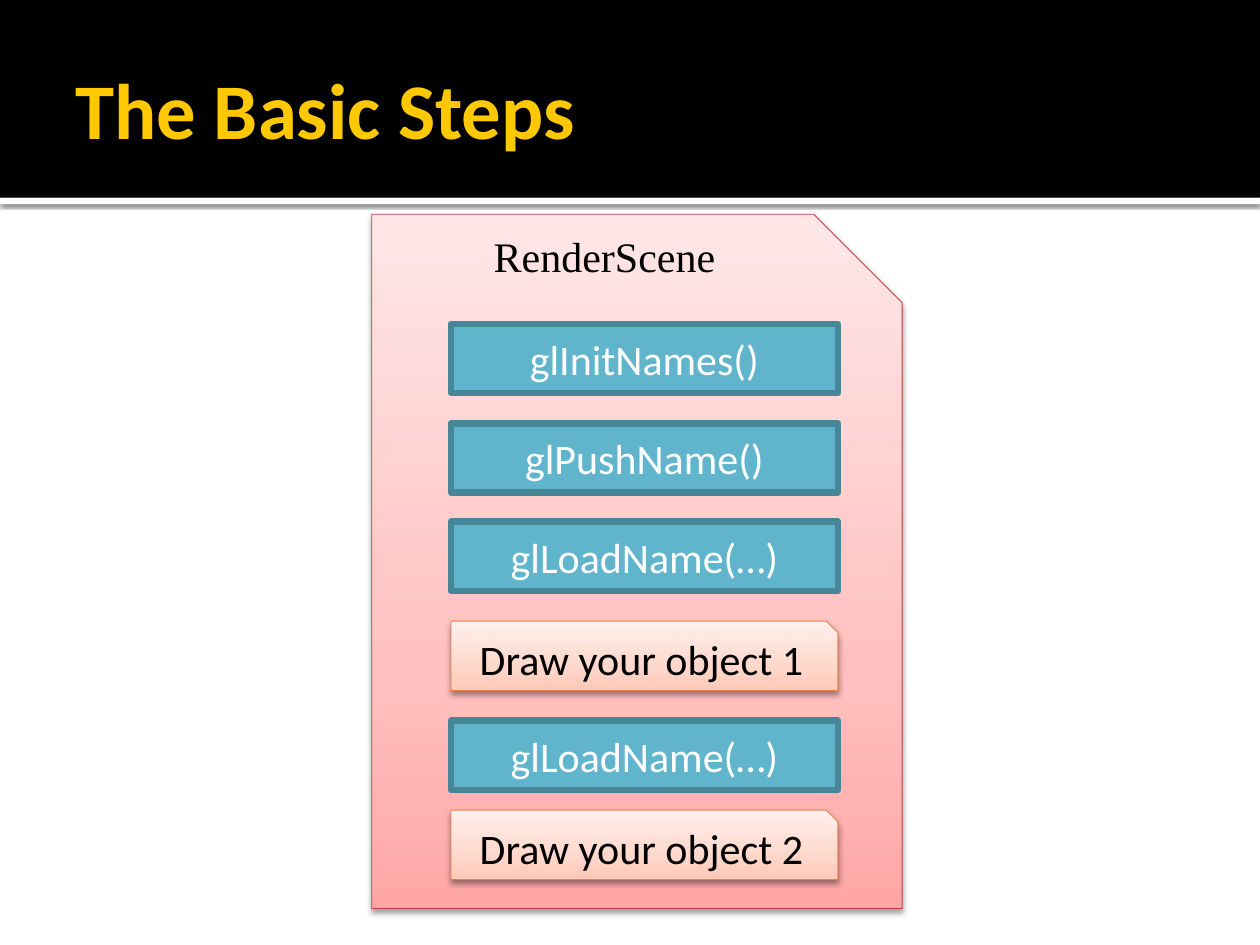
from copy import deepcopy

from lxml import etree
from pptx import Presentation
from pptx.dml.color import RGBColor
from pptx.enum import shapes, text
from pptx.oxml import ns
from pptx.util import Inches, Pt

COLORS = {
    "black": "000000",
    "white": "FFFFFF",
    "title": "FFC800",
    "call": "60B5CC",
    "call_line": "478697",
    "scene_line": "C54342",
    "draw_line": "E7824C",
}
SCENE_STOPS = [(0, "FFA7A7"), (0.35, "FFC1C0"), (1, "FFE7E7")]
DRAW_STOPS = [(0, "FFC8B7"), (0.35, "FFD8CC"), (1, "FFF0EC")]
CARD_SHADOW = {"opacity": 38, "blur": 3.5, "distance": 2}
BAND_SHADOW = {"opacity": 60, "blur": 2.5, "distance": 0.8}

RECTANGLE = shapes.MSO_SHAPE.RECTANGLE
SNIPPED = shapes.MSO_SHAPE.SNIP_1_RECTANGLE
STEP_LEFT, STEP_WIDTH, STEP_HEIGHT = 3.58, 3.07, 0.55
STEPS = [
    (2.57, "call", "glInitNames()"),
    (3.36, "call", "glPushName()"),
    (4.14, "call", "glLoadName(…)"),
    (4.93, "draw", "Draw your object 1"),
    (5.72, "call", "glLoadName(…)"),
    (6.43, "draw", "Draw your object 2"),
]


def color(name):
    return RGBColor.from_string(COLORS[name])


def add_box(slide, kind, box, fill=None, line=None, line_width=0.5):
    shape = slide.shapes.add_shape(kind, *map(Inches, box))
    shape.shadow.inherit = False
    if fill:
        shape.fill.solid()
        shape.fill.fore_color.rgb = color(fill)
    if line:
        shape.line.color.rgb = color(line)
        shape.line.width = Pt(line_width)
    else:
        shape.line.fill.background()
    return shape


def add_shadow(shape, opacity, blur, distance):
    """Drop a soft black shadow straight below the shape."""
    effects = shape._element.spPr.find(ns.qn("a:effectLst"))
    shadow = etree.SubElement(
        effects, ns.qn("a:outerShdw"), blurRad=str(Pt(blur)),
        dist=str(Pt(distance)), dir="5400000", rotWithShape="0")
    tone = etree.SubElement(shadow, ns.qn("a:srgbClr"), val=COLORS["black"])
    etree.SubElement(tone, ns.qn("a:alpha"), val=str(opacity * 1000))


def fill_gradient(shape, stops):
    """Fill from the bottom edge up with three stops."""
    shape.fill.gradient()
    shape.fill.gradient_angle = 90
    stop_list = shape._element.spPr.find(".//" + ns.qn("a:gsLst"))
    stop_list.append(deepcopy(stop_list[-1]))
    for stop, (position, value) in zip(shape.fill.gradient_stops, stops):
        stop.position = position
        stop.color.rgb = RGBColor.from_string(value)


def add_card(slide, box, stops, line):
    card = add_box(slide, SNIPPED, box, line=line)
    fill_gradient(card, stops)
    add_shadow(card, **CARD_SHADOW)
    return card


def write(shape, content, font_color, align=text.PP_ALIGN.LEFT, frame=None, **font):
    for name, value in (frame or {}).items():
        setattr(shape.text_frame, name, value)
    paragraph = shape.text_frame.paragraphs[0]
    paragraph.alignment = align
    run = paragraph.add_run()
    run.text = content
    run.font.color.rgb = color(font_color)
    for name, value in ({"name": "Calibri", "size": Pt(24)} | font).items():
        setattr(run.font, name, value)


def add_label(slide, box, content, font_color, frame, **font):
    label = slide.shapes.add_textbox(*map(Inches, box))
    write(label, content, font_color, frame=frame, **font)


def add_step(slide, top, kind, content):
    box = (STEP_LEFT, top, STEP_WIDTH, STEP_HEIGHT)
    if kind == "call":
        step = add_box(slide, RECTANGLE, box, "call", "call_line", 3.78)
    else:
        step = add_card(slide, box, DRAW_STOPS, "draw_line")
    write(step, content, "white" if kind == "call" else "black",
          text.PP_ALIGN.CENTER,
          {"vertical_anchor": text.MSO_ANCHOR.MIDDLE, "word_wrap": True})


def add_header(slide):
    stripe = add_box(slide, RECTANGLE, (0, 1.57, 10, 0.05), "white")
    add_shadow(stripe, **BAND_SHADOW)
    add_box(slide, RECTANGLE, (0, 0, 10, 1.57), "black")
    frame = {"vertical_anchor": text.MSO_ANCHOR.MIDDLE, "word_wrap": True,
             "margin_right": Inches(0.05)}
    add_label(slide, (0.5, 0.17, 9, 1.37), "The Basic Steps", "title", frame,
              size=Pt(45), bold=True)


def main():
    presentation = Presentation()
    presentation.slide_width = Inches(10)
    presentation.slide_height = Inches(7.5)
    slide = presentation.slides.add_slide(presentation.slide_layouts[6])

    add_header(slide)
    add_card(slide, (2.95, 1.7, 4.21, 5.51), SCENE_STOPS, "scene_line")
    frame = {"word_wrap": False,
             "auto_size": text.MSO_AUTO_SIZE.SHAPE_TO_FIT_TEXT}
    add_label(slide, (3.82, 1.78, 1.98, 0.51), "RenderScene", "black", frame,
              name="Times New Roman")
    for top, kind, content in STEPS:
        add_step(slide, top, kind, content)

    presentation.save("out.pptx")


if __name__ == "__main__":
    main()
